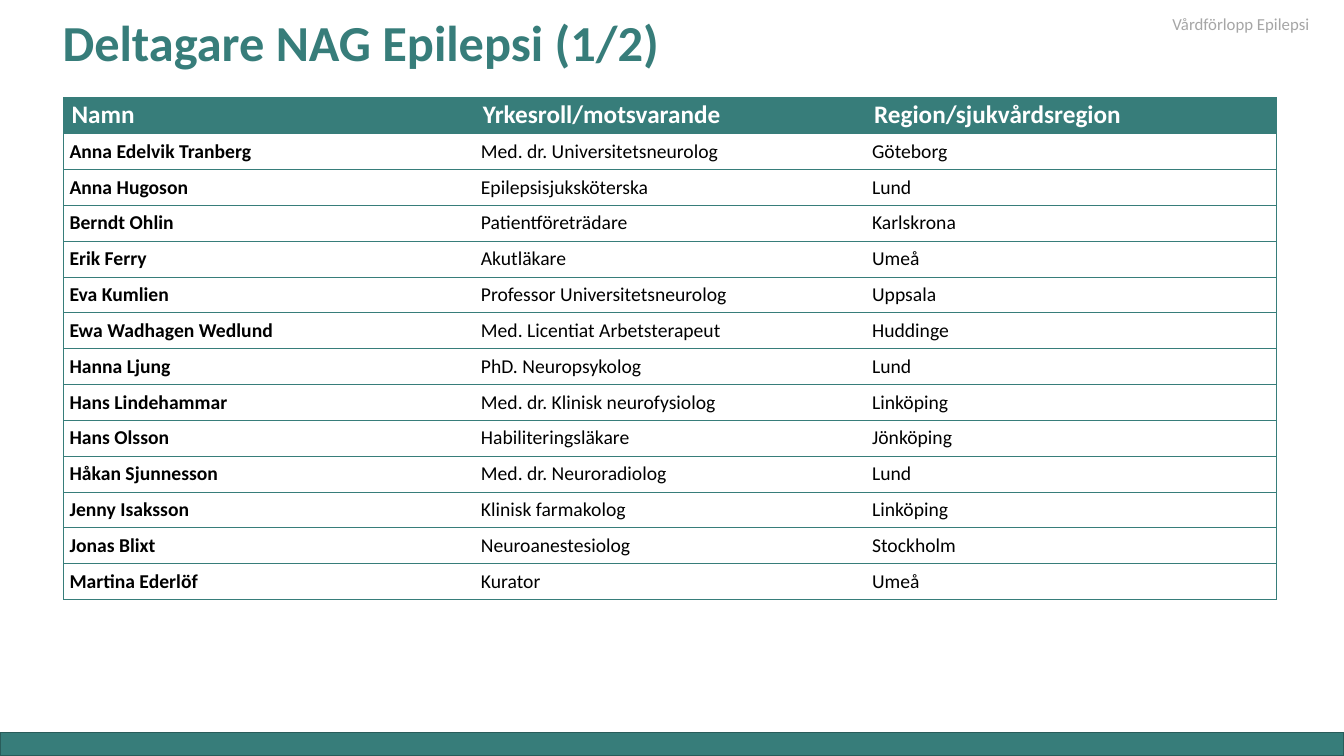
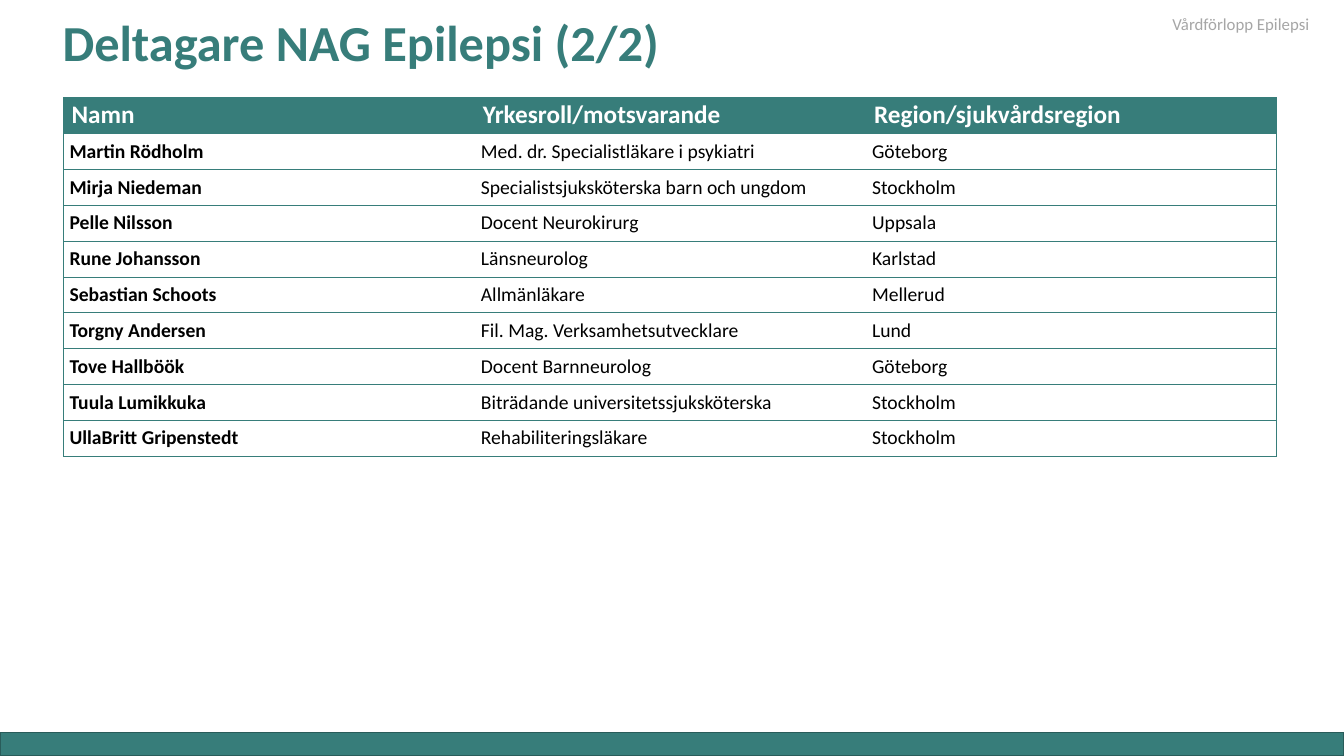
from pptx import Presentation
from pptx.dml.color import RGBColor
from pptx.enum.shapes import MSO_SHAPE as Preset, PP_PLACEHOLDER as Placeholder
from pptx.enum.text import MSO_ANCHOR as Anchor, MSO_AUTO_SIZE as AutoSize, PP_ALIGN as Align
from pptx.oxml.ns import qn
from pptx.util import Inches, Pt
from lxml import etree

# Shared style
FONT = "Calibri"
TEAL, DARK_TEAL = "377D7A", "295C5A"
BLACK, WHITE, GREY = "000000", "FFFFFF", "A6A6A6"
SLIDE_WIDTH, SLIDE_HEIGHT = 13.33, 7.5
BAND_HEIGHT = 0.23
COLUMN_WIDTHS = (4.08, 3.88, 4.07)
ROW_HEIGHT = 4.98 / 14
NO_GRID_STYLE = "{2D5ABB26-0587-4C30-8999-92F81FD0307C}"

# Content
HEADINGS = ("Namn", "Yrkesroll/motsvarande", "Region/sjukvårdsregion")
PARTICIPANTS = (
    (
        ("Anna Edelvik Tranberg", "Med. dr. Universitetsneurolog", "Göteborg"),
        ("Anna Hugoson", "Epilepsisjuksköterska", "Lund"),
        ("Berndt Ohlin", "Patientföreträdare", "Karlskrona"),
        ("Erik Ferry", "Akutläkare", "Umeå"),
        ("Eva Kumlien", "Professor Universitetsneurolog", "Uppsala"),
        ("Ewa Wadhagen Wedlund", "Med. Licentiat Arbetsterapeut", "Huddinge"),
        ("Hanna Ljung", "PhD. Neuropsykolog", "Lund"),
        ("Hans Lindehammar", "Med. dr. Klinisk neurofysiolog", "Linköping"),
        ("Hans Olsson", "Habiliteringsläkare", "Jönköping"),
        ("Håkan Sjunnesson", "Med. dr. Neuroradiolog", "Lund"),
        ("Jenny Isaksson", "Klinisk farmakolog", "Linköping"),
        ("Jonas Blixt", "Neuroanestesiolog", "Stockholm"),
        ("Martina Ederlöf", "Kurator", "Umeå"),
    ),
    (
        ("Martin Rödholm", "Med. dr. Specialistläkare i psykiatri", "Göteborg"),
        ("Mirja Niedeman", "Specialistsjuksköterska barn och ungdom", "Stockholm"),
        ("Pelle Nilsson", "Docent Neurokirurg", "Uppsala"),
        ("Rune Johansson", "Länsneurolog", "Karlstad"),
        ("Sebastian Schoots", "Allmänläkare", "Mellerud"),
        ("Torgny Andersen", "Fil. Mag. Verksamhetsutvecklare", "Lund"),
        ("Tove Hallböök", "Docent Barnneurolog", "Göteborg"),
        ("Tuula Lumikkuka", "Biträdande universitetssjuksköterska", "Stockholm"),
        ("UllaBritt Gripenstedt", "Rehabiliteringsläkare", "Stockholm"),
    ),
)


def color(hex_string):
    return RGBColor.from_string(hex_string)


def write(frame, text, size, ink=BLACK, bold=False, spacing=None):
    """Fill a text frame with one formatted paragraph."""
    frame.text = text
    paragraph = frame.paragraphs[0]
    paragraph.alignment = Align.LEFT
    paragraph.line_spacing = spacing
    font = paragraph.runs[0].font
    font.name, font.size, font.bold = FONT, Pt(size), bold
    font.color.rgb = color(ink)


def add_text(slide, left, top, width, height, text, **text_format):
    box = slide.shapes.add_textbox(*map(Inches, (left, top, width, height)))
    box.text_frame.word_wrap = True
    write(box.text_frame, text, **text_format)


def prepare_layout(layout):
    """Keep only the title placeholder and set its place."""
    for placeholder in list(layout.placeholders):
        if placeholder.placeholder_format.type != Placeholder.TITLE:
            placeholder.element.getparent().remove(placeholder.element)
            continue
        placeholder.left, placeholder.top = Inches(0.52), Inches(0.04)
        placeholder.width, placeholder.height = Inches(11.5), Inches(0.82)


def add_band(slide):
    """Draw the bottom band, then move it to the layout."""
    band = slide.shapes.add_shape(
        Preset.RECTANGLE, 0, Inches(SLIDE_HEIGHT - BAND_HEIGHT),
        Inches(SLIDE_WIDTH), Inches(BAND_HEIGHT))
    band.shadow.inherit = False
    band.fill.solid()
    band.fill.fore_color.rgb = color(TEAL)
    band.line.color.rgb = color(DARK_TEAL)
    band.line.width = Pt(1)
    slide.slide_layout.shapes.element.append(band.element)


def set_borders(cell, sides):
    properties = cell._tc.get_or_add_tcPr()
    for index, side in enumerate(sides):
        line = etree.Element(qn(f"a:ln{side}"), w=str(Pt(0.5)))
        fill = etree.SubElement(line, qn("a:solidFill"))
        etree.SubElement(fill, qn("a:srgbClr"), val=TEAL)
        properties.insert(index, line)


def format_cell(cell, text, row, column):
    heading = row == 0
    side_inset, edge_inset = (0.08, 0) if heading else (0.06, 0.05)
    cell.margin_left = cell.margin_right = Inches(side_inset)
    cell.margin_top = cell.margin_bottom = Inches(edge_inset)
    cell.vertical_anchor = Anchor.TOP if heading else Anchor.MIDDLE
    if heading:
        cell.fill.solid()
        cell.fill.fore_color.rgb = color(TEAL)
        write(cell.text_frame, text, size=18, ink=WHITE, bold=True, spacing=1.06)
    else:
        cell.fill.background()
        write(cell.text_frame, text, size=14, bold=column == 0)
    outer_side = {0: "L", len(COLUMN_WIDTHS) - 1: "R"}.get(column, "")
    set_borders(cell, outer_side + "TB")


def add_participant_table(slide, participants):
    rows = (HEADINGS, *participants)
    frame = slide.shapes.add_table(
        len(rows), len(HEADINGS), Inches(0.63), Inches(0.97),
        Inches(sum(COLUMN_WIDTHS)), Inches(ROW_HEIGHT * len(rows)))
    frame.element.find(f".//{qn('a:tableStyleId')}").text = NO_GRID_STYLE
    table = frame.table
    table.horz_banding = False
    for table_column, width in zip(table.columns, COLUMN_WIDTHS):
        table_column.width = Inches(width)
    for row, texts in enumerate(rows):
        table.rows[row].height = Inches(ROW_HEIGHT)
        for column, text in enumerate(texts):
            format_cell(table.cell(row, column), text, row, column)


def add_title(slide, text):
    frame = slide.shapes.title.text_frame
    frame.vertical_anchor = Anchor.MIDDLE
    frame.auto_size = AutoSize.NONE
    write(frame, text, size=36, ink=TEAL, bold=True, spacing=0.9)


def main():
    presentation = Presentation()
    presentation.slide_width = Inches(SLIDE_WIDTH)
    presentation.slide_height = Inches(SLIDE_HEIGHT)
    layout = presentation.slide_layouts.get_by_name("Title Only")
    prepare_layout(layout)

    for number, participants in enumerate(PARTICIPANTS, start=1):
        slide = presentation.slides.add_slide(layout)
        if number == 1:
            add_band(slide)
        add_title(slide, f"Deltagare NAG Epilepsi ({number}/{len(PARTICIPANTS)})")
        add_participant_table(slide, participants)
        add_text(slide, 11.53, 0.09, 1.7, 0.3, "Vårdförlopp Epilepsi", size=12, ink=GREY)

    presentation.save("out.pptx")


if __name__ == "__main__":
    main()
